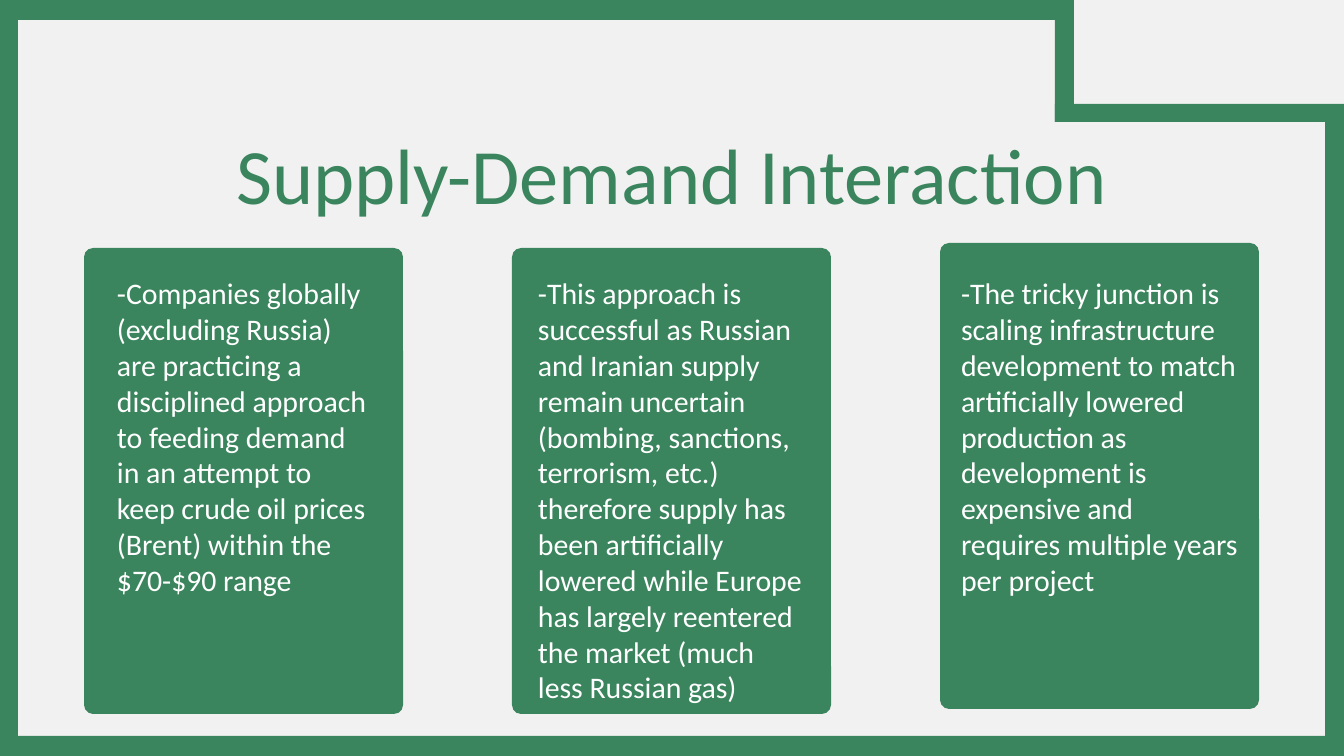
from dataclasses import dataclass

from pptx import Presentation
from pptx.dml.color import RGBColor
from pptx.enum.shapes import MSO_SHAPE
from pptx.enum.text import MSO_ANCHOR, MSO_AUTO_SIZE, PP_ALIGN
from pptx.util import Pt

EMU_PER_PX = 914400 / 134.4


@dataclass(frozen=True)
class Theme:
    background: RGBColor = RGBColor(0xF1, 0xF1, 0xF1)
    green: RGBColor = RGBColor(0x3A, 0x85, 0x5D)
    white: RGBColor = RGBColor(0xFF, 0xFF, 0xFF)
    font: str = "Calibri"
    title_size: int = 42
    body_size: int = 16
    inset: int = 13
    card_radius: int = 9


def px(*lengths):
    return [round(n * EMU_PER_PX) for n in lengths]


def set_all(target, values):
    for name, value in values.items():
        setattr(target, name, value)


class SlideBuilder:
    def __init__(self, slide, theme):
        self.slide, self.theme = slide, theme
        fill = slide.background.fill
        fill.solid()
        fill.fore_color.rgb = theme.background

    def fill_text(self, sp, text, size, color, align):
        tf = sp.text_frame
        inset, = px(self.theme.inset)
        set_all(tf, dict(
            word_wrap=True, auto_size=MSO_AUTO_SIZE.NONE,
            vertical_anchor=MSO_ANCHOR.TOP,
            margin_left=inset, margin_right=inset,
            margin_top=inset, margin_bottom=inset))
        p = tf.paragraphs[0]
        p.alignment = align
        r = p.add_run()
        r.text = text
        set_all(r.font, dict(name=self.theme.font, size=Pt(size)))
        r.font.color.rgb = color

    def title(self, text, *box):
        sp = self.slide.shapes.title
        set_all(sp, dict(zip(("left", "top", "width", "height"), px(*box))))
        self.fill_text(sp, text, self.theme.title_size, self.theme.green, PP_ALIGN.CENTER)

    def body(self, text, *box):
        sp = self.slide.shapes.add_textbox(*px(*box))
        self.fill_text(sp, text, self.theme.body_size, self.theme.white, PP_ALIGN.LEFT)

    def block(self, *box, kind=MSO_SHAPE.RECTANGLE):
        sp = self.slide.shapes.add_shape(kind, *px(*box))
        sp.shadow.inherit = False
        sp.fill.solid()
        sp.fill.fore_color.rgb = self.theme.green
        sp.line.fill.background()
        return sp

    def card(self, left, top, width, height):
        sp = self.block(left, top, width, height, kind=MSO_SHAPE.ROUNDED_RECTANGLE)
        sp.adjustments[0] = self.theme.card_radius / min(width, height)


CARD_LEFT, CARD_STEP, CARD_WIDTH, CARD_HEIGHT = 84, 428, 319, 466
TEXT_TOP = 262

# card top, text left, text width, text height, text
CARDS = [
    (248, 104, 280, 429,
     "-Companies globally (excluding Russia) are practicing a disciplined "
     "approach to feeding demand in an attempt to keep crude oil prices "
     "(Brent) within the $70-$90 range"),
    (248, 525, 294, 411,
     "-This approach is successful as Russian and Iranian supply remain "
     "uncertain (bombing, sanctions, terrorism, etc.) therefore supply has "
     "been artificially lowered while Europe has largely reentered the market "
     "(much less Russian gas)"),
    (243, 948, 304, 388,
     "-The tricky junction is scaling infrastructure development to match "
     "artificially lowered production as development is expensive and "
     "requires multiple years per project"),
]

FRAME = [
    (1055, 0, 19, 122),     # notch side
    (1055, 104, 289, 18),   # notch floor
    (0, 0, 1074, 20),       # top
    (0, 0, 18, 756),        # left
    (1325, 112, 19, 638),   # right
    (0, 736, 1344, 20),     # bottom
]


def main():
    prs = Presentation()
    prs.slide_width, prs.slide_height = px(1344, 756)
    s = SlideBuilder(prs.slides.add_slide(prs.slide_layouts[5]), Theme())
    s.title("Supply-Demand Interaction", 159, 113, 1025, 97)
    for i, (top, text_left, text_width, text_height, text) in enumerate(CARDS):
        s.card(CARD_LEFT + i * CARD_STEP, top, CARD_WIDTH, CARD_HEIGHT)
        s.body(text, text_left, TEXT_TOP, text_width, text_height)
    for bar in FRAME:
        s.block(*bar)
    prs.save("out.pptx")


if __name__ == "__main__":
    main()
